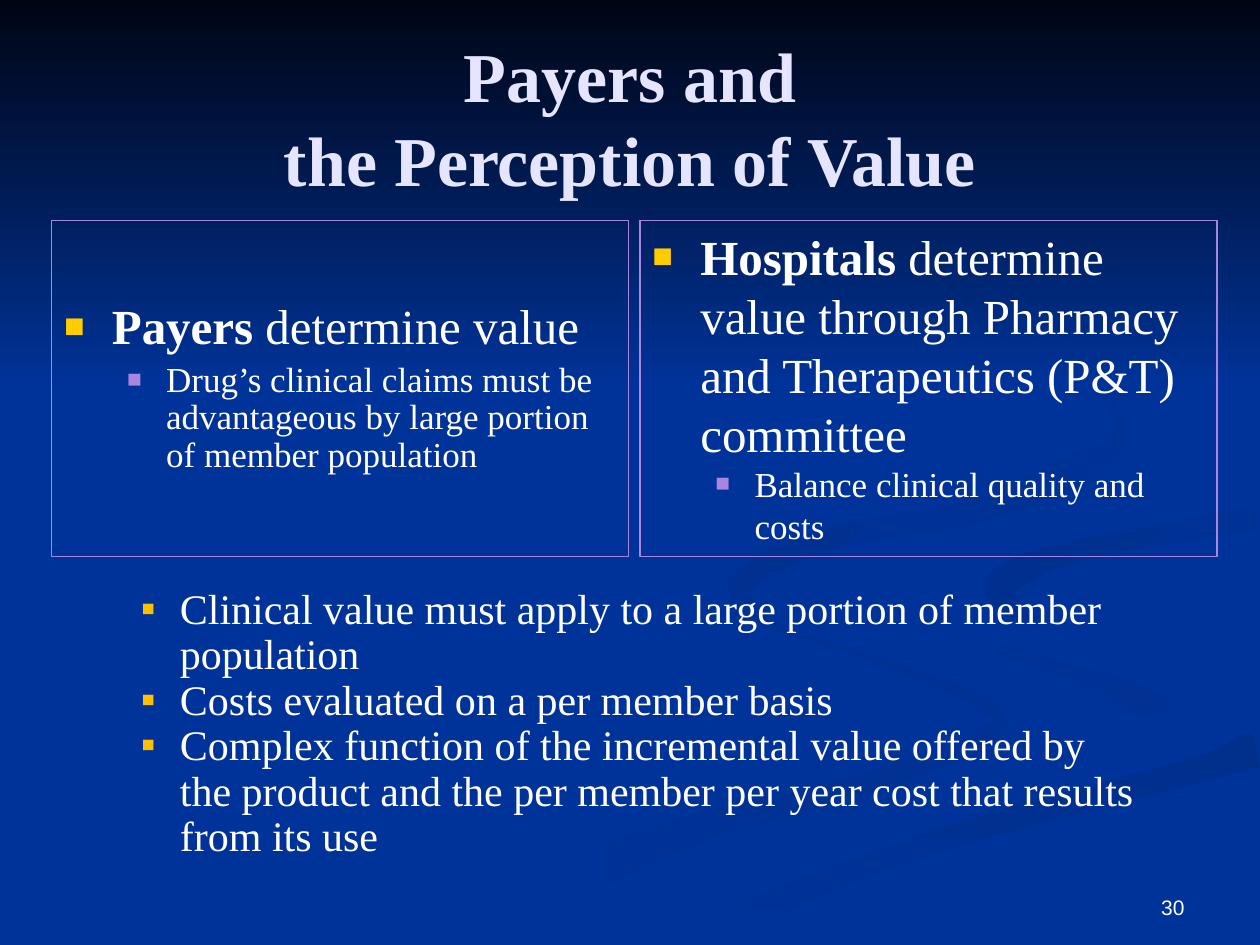
from dataclasses import dataclass
from math import hypot
from typing import Any

from lxml.etree import SubElement as Sub
from pptx import Presentation
from pptx.dml.color import RGBColor as RGB
from pptx.enum.text import MSO_ANCHOR as ANCHOR, PP_ALIGN as ALIGN
from pptx.oxml.ns import qn
from pptx.util import Inches, Pt

NAVY = RGB(0x00, 0x33, 0x99)
NIGHT = RGB(0x00, 0x05, 0x14)
DUSK = RGB(0x00, 0x31, 0x93)
SHADE = RGB(0x00, 0x2F, 0x8C)
LAVENDER = RGB(0xE5, 0xE5, 0xFF)
PURPLE = RGB(0xA8, 0x86, 0xE0)
YELLOW = RGB(0xFF, 0xCC, 0x00)
AMBER = RGB(0xFF, 0xC0, 0x00)
WHITE = RGB(0xFF, 0xFF, 0xFF)

COLS, ROWS = 1000, 750
CELL = Inches(0.01)
MARGIN, GUTTER = 41, 9
PANEL_TOP, PANEL_W, PANEL_H = 175, 458, 267
FADE_H = 308
CURVE_STEPS = 6


@dataclass
class Ribbon:
    """Describe a ribbon by knots of column, row and half width, and its gradient."""
    knots: list
    start: RGB
    end: RGB
    angle: int = 45

    def outline(self):
        """Sweep the half width along a smooth curve through the knots."""
        padded = [self.knots[0], *self.knots, self.knots[-1]]
        track = [self.between(padded[i:i + 4], step / CURVE_STEPS)
                 for i in range(len(self.knots) - 1)
                 for step in range(CURVE_STEPS)] + [self.knots[-1]]
        near, far = [], []
        for i, (x, y, half) in enumerate(track):
            before, after = track[max(i - 1, 0)], track[min(i + 1, len(track) - 1)]
            dx, dy = after[0] - before[0], after[1] - before[1]
            scale = half / hypot(dx, dy)
            near.append(self.clip(x - dy * scale, y + dx * scale))
            far.append(self.clip(x + dy * scale, y - dx * scale))
        return near + far[::-1]

    def between(self, four, t):
        """Return the Catmull-Rom point at share t of the middle span."""
        return [b + t / 2 * (c - a + t * (2 * a - 5 * b + 4 * c - d
                                          + t * (3 * (b - c) + d - a)))
                for a, b, c, d in zip(*four)]

    def clip(self, x, y):
        """Keep a point on the slide."""
        return min(x, COLS), min(y, ROWS)


LOWER_SWIRL = Ribbon([(574, 462, 1), (588, 489, 2), (700, 525, 2), (793, 573, 7),
                      (690, 621, 8), (552, 658, 12), (330, 749, 26)], NAVY, DUSK, 0)
INNER_SWIRL = Ribbon([(724, 464, 1), (750, 497, 5), (870, 540, 8), (930, 573, 12),
                      (894, 605, 1)], NAVY, DUSK)
BOTTOM_BAND = Ribbon([(998, 595, 14), (790, 650, 13), (640, 702, 12),
                      (537, 749, 25)], SHADE, NAVY, 90)
MAIN_SWIRL = Ribbon([(999, 394, 8), (840, 421, 7), (754, 464, 26), (815, 504, 12),
                     (930, 537, 14), (965, 568, 24), (770, 640, 9), (585, 704, 12),
                     (498, 749, 20)], NAVY, NAVY)
RIGHT_BAND = Ribbon([(998, 411, 9), (860, 436, 8), (793, 465, 12),
                     (826, 496, 1)], SHADE, NAVY)
UPPER_SWIRL = Ribbon([(762, 233, 1), (862, 290, 6), (888, 345, 4), (855, 372, 12),
                      (764, 408, 9), (660, 427, 8), (586, 465, 9),
                      (622, 500, 1)], SHADE, NAVY)
RIBBONS = [LOWER_SWIRL, INNER_SWIRL, BOTTOM_BAND, MAIN_SWIRL, RIGHT_BAND, UPPER_SWIRL]

PANELS = [
    (ANCHOR.MIDDLE, 0.9, 4, "Payers", " determine value",
     "Drug’s clinical claims must be advantageous by large portion of member population"),
    (ANCHOR.TOP, 1, 0, "Hospitals",
     " determine value through Pharmacy and Therapeutics (P&T) committee",
     "Balance clinical quality and costs")]

POINTS = [
    "Clinical value must apply to a large portion of member population",
    "Costs evaluated on a per member basis",
    "Complex function of the incremental value offered by the product "
    "and the per member per year cost that results from its use"]


@dataclass
class Deck:
    """Hold the text style and the current slide, and draw its elements."""
    s: Any
    font: str = "Times New Roman"
    bullet_font: str = "Arial"
    color: RGB = WHITE

    def area(self, points, start, end, angle):
        """Draw a closed outline with a two-colour gradient."""
        builder = self.s.shapes.build_freeform(*points[0], scale=CELL)
        builder.add_line_segments(points[1:])
        sp = builder.convert_to_shape()
        sp.shadow.inherit = False
        sp.line.fill.background()
        sp.fill.gradient()
        sp.fill.gradient_angle = -angle % 360
        for stop, color in zip(sp.fill.gradient_stops, (start, end)):
            stop.color.rgb = color

    def backdrop(self):
        """Draw the ribbons and the dark fade over the top."""
        for ribbon in RIBBONS:
            self.area(ribbon.outline(), ribbon.start, ribbon.end, ribbon.angle)
        self.area([(0, 0), (0, FADE_H), (COLS, FADE_H), (COLS, 0)], NIGHT, NAVY, 90)

    def box(self, x, y, w, h, anchor=ANCHOR.TOP, outline=None):
        """Add a wrapping text box and return its text frame."""
        sp = self.s.shapes.add_textbox(*(CELL * n for n in (x, y, w, h)))
        if outline is not None:
            sp.line.color.rgb = outline
            sp.line.width = Pt(0.75)
        tf = sp.text_frame
        tf.word_wrap = True
        tf.vertical_anchor = anchor
        return tf

    def style(self, p, size, align=ALIGN.LEFT, bold=False, color=None, font=None):
        """Format every run of a paragraph."""
        p.alignment = align
        for r in p.runs:
            r.font.size = Pt(size)
            r.font.name = font or self.font
            r.font.bold = bold
            r.font.color.rgb = color or self.color

    def bullet(self, p, mark, color, margin, hang, spacing=0.9, percent=100):
        """Give a paragraph a coloured bullet and a hanging indent."""
        p.line_spacing = spacing
        pPr = p._p.get_or_add_pPr()
        pPr.set("marL", str(CELL * margin))
        pPr.set("indent", str(-CELL * hang))
        Sub(Sub(pPr, qn("a:buClr")), qn("a:srgbClr"), val=str(color))
        Sub(pPr, qn("a:buSzPct"), val=str(percent * 1000))
        Sub(pPr, qn("a:buFont"), typeface=self.bullet_font)
        Sub(pPr, qn("a:buChar"), char=mark)

    def line(self, text, box, size, *look, **more):
        """Add a box with one styled paragraph."""
        p = self.box(*box).paragraphs[0]
        p.text = text
        self.style(p, size, *look, **more)

    def panel(self, column, anchor, spacing, gap, lead, rest, detail):
        """Draw an outlined panel with a headline and one detail."""
        x = MARGIN + column * (PANEL_W + GUTTER)
        tf = self.box(x, PANEL_TOP, PANEL_W, PANEL_H, anchor, PURPLE)
        p = tf.paragraphs[0]
        p.text = lead
        p.add_run().text = rest
        self.style(p, 28)
        p.runs[0].font.bold = True
        self.bullet(p, "■", YELLOW, 38, 38, spacing, 70)
        p = tf.add_paragraph()
        p.text = detail
        p.level = 1
        p.space_before = Pt(gap)
        self.style(p, 20)
        self.bullet(p, "■", PURPLE, 81, 31, spacing, 70)

    def points(self, texts):
        """Draw the bulleted list."""
        tf = self.box(83, 462, 833, 228)
        tf.text = "\n".join(texts)
        for p in tf.paragraphs:
            self.style(p, 24)
            self.bullet(p, "▪", AMBER, 50, 31)


def main():
    prs = Presentation()
    prs.slide_width, prs.slide_height = CELL * COLS, CELL * ROWS
    s = prs.slides.add_slide(prs.slide_layouts[6])
    s.background.fill.solid()
    s.background.fill.fore_color.rgb = NAVY
    deck = Deck(s)
    deck.backdrop()
    deck.line("Payers and\vthe Perception of Value", (50, 30, 900, 125, ANCHOR.MIDDLE),
              40, ALIGN.CENTER, True, LAVENDER)
    for column, panel in enumerate(PANELS):
        deck.panel(column, *panel)
    deck.line("30", (717, 683, 233, 52, ANCHOR.BOTTOM), 12, ALIGN.RIGHT, font="Arial")
    deck.points(POINTS)
    prs.save("out.pptx")


if __name__ == "__main__":
    main()
